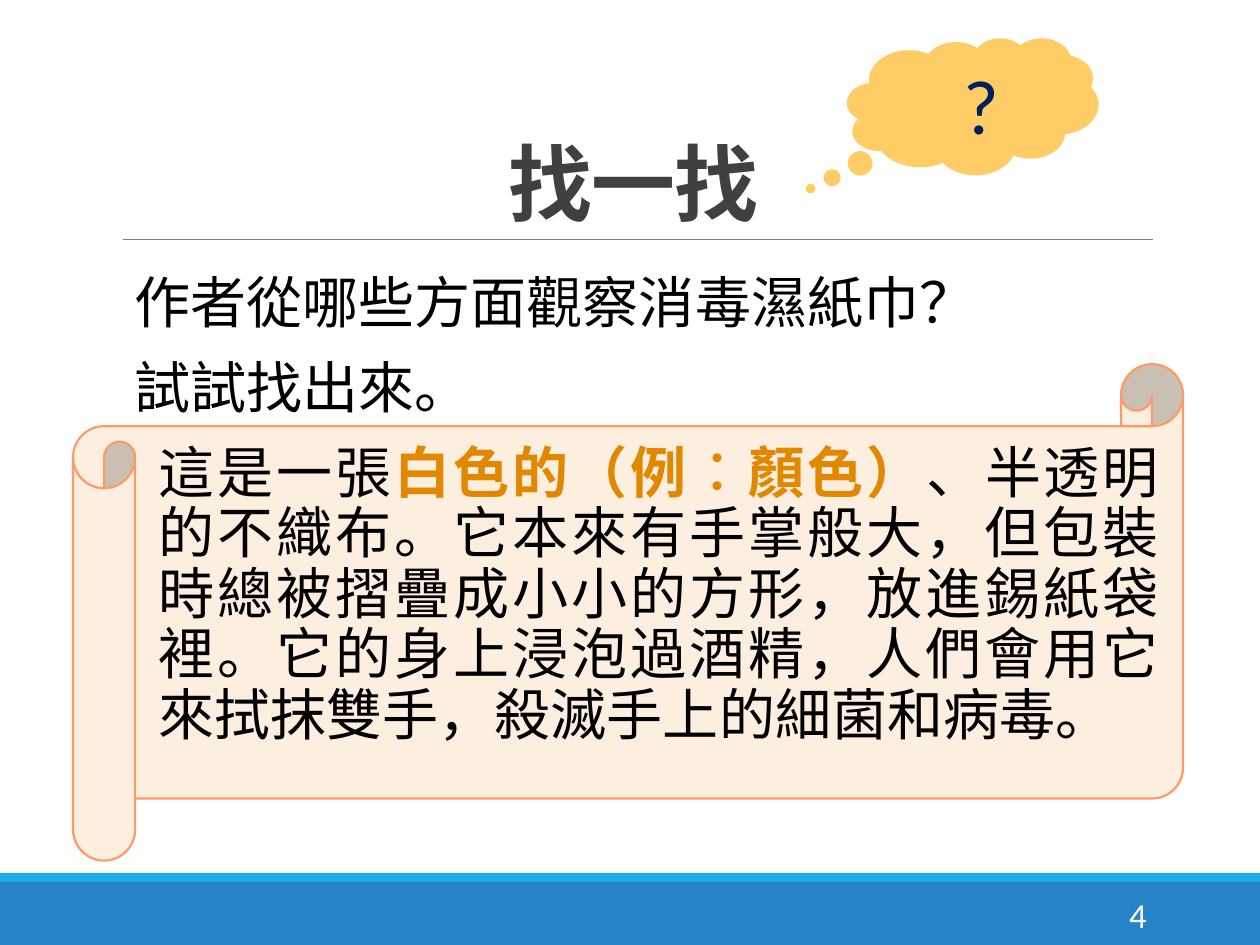
"""Build the slide that asks what the writer observed about a wet wipe."""
from lxml import etree
from pptx import Presentation
from pptx.dml.color import RGBColor
from pptx.enum.shapes import MSO_CONNECTOR, MSO_SHAPE
from pptx.enum.text import MSO_ANCHOR, MSO_AUTO_SIZE, PP_ALIGN
from pptx.oxml.ns import qn
from pptx.util import Inches, Pt

RECT, SCROLL, CLOUD = MSO_SHAPE.RECTANGLE, MSO_SHAPE.HORIZONTAL_SCROLL, MSO_SHAPE.CLOUD_CALLOUT
STRAIGHT = MSO_CONNECTOR.STRAIGHT
MIDDLE, BOTTOM = MSO_ANCHOR.MIDDLE, MSO_ANCHOR.BOTTOM
LEFT, CENTER, RIGHT, JUSTIFY = PP_ALIGN.LEFT, PP_ALIGN.CENTER, PP_ALIGN.RIGHT, PP_ALIGN.JUSTIFY
FIXED = MSO_AUTO_SIZE.NONE

BLUE = RGBColor(0x26, 0x83, 0xC6)
SKY = RGBColor(0x1C, 0xAD, 0xE4)
GRAY = RGBColor(0x80, 0x80, 0x80)
DARK = RGBColor(0x40, 0x40, 0x40)
CREAM = RGBColor(0xFC, 0xEF, 0xE0)
CORAL = RGBColor(0xFF, 0x99, 0x66)
GOLD = RGBColor(0xFF, 0xCC, 0x66)
AMBER = RGBColor(0xE2, 0x87, 0x00)
NAVY = RGBColor(0x00, 0x20, 0x60)
BLACK = RGBColor(0, 0, 0)
WHITE = RGBColor(0xFF, 0xFF, 0xFF)
HAN, LATIN = "Noto Sans CJK SC", "Calibri"


def write(para, text, size=32, font=HAN, color=BLACK, bold=False, align=LEFT):
    para.alignment = align
    run = para.add_run()
    run.text = text
    run.font.size, run.font.name, run.font.bold = Pt(size), font, bold
    run.font.color.rgb = color
    etree.SubElement(run.font._element, qn("a:ea"), typeface=font)
    return run


def draw(kind, box, fill, line=None):
    shape = slide.shapes.add_shape(kind, *map(Inches, box))
    shape.shadow.inherit = False
    shape.fill.solid()
    shape.fill.fore_color.rgb = fill
    if line is None:
        shape.line.fill.background()
    else:
        shape.line.color.rgb, shape.line.width = line, Pt(1.25)
    return shape


deck = Presentation()
deck.slide_width, deck.slide_height = Inches(10), Inches(7.5)
slide = deck.slides.add_slide(deck.slide_layouts[1])
title, body = slide.placeholders

draw(RECT, (0, 7, 10, 0.5), BLUE)
draw(RECT, (0, 6.93, 10, 0.07), SKY)
rule = slide.shapes.add_connector(STRAIGHT, *map(Inches, (0.98, 1.9, 9.15, 1.9)))
rule.line.color.rgb, rule.line.width = GRAY, Pt(0.5)
etree.SubElement(rule._element.spPr, qn("a:effectLst"))
draw(SCROLL, (0.58, 2.89, 8.81, 3.94), CREAM, CORAL)

for holder, box in ((title, (0.9, 0.31, 8.25, 1.59)), (body, (0.77, 2.13, 8.43, 4.11))):
    holder.left, holder.top, holder.width, holder.height = map(Inches, box)
    holder.text_frame.auto_size = FIXED
    holder.text_frame.word_wrap = True
    slide.shapes._spTree.append(holder._element)

title.text_frame.vertical_anchor = BOTTOM
head = title.text_frame.paragraphs[0]
head.line_spacing = 0.85
run = write(head, "找一找", size=48, color=DARK, bold=True, align=CENTER)
run.font._element.set("spc", "-50")

frame = body.text_frame
frame.margin_left = frame.margin_right = 0
story = (
    (0.3, LEFT, (("作者從哪些方面觀察消毒濕紙巾？", BLACK),)),
    (0.3, LEFT, (("試試找出來。", BLACK),)),
    (0.49, JUSTIFY, (
        ("這是一張", BLACK),
        ("白色的（例︰顏色）", AMBER),
        ("、半透明的不織布。它本來有手掌般大，但包裝時總被摺疊成小小的方形，"
         "放進錫紙袋裡。它的身上浸泡過酒精，人們會用它來拭抹雙手，"
         "殺滅手上的細菌和病毒。", BLACK))),
)
for row, (indent, align, parts) in enumerate(story):
    para = frame.add_paragraph() if row else frame.paragraphs[0]
    para.line_spacing, para.space_before, para.space_after = 0.9, Pt(12), Pt(2)
    props = para._p.get_or_add_pPr()
    props.set("marL", str(Inches(indent)))
    props.set("indent", "0")
    etree.SubElement(props, qn("a:buNone"))
    for text, color in parts:
        write(para, text, color=color, bold=color == AMBER, align=align)

page = slide.shapes.add_textbox(*map(Inches, (8.12, 7.06, 1.08, 0.4))).text_frame
page.word_wrap, page.vertical_anchor = True, MIDDLE
write(page.paragraphs[0], "4", size=20, font=LATIN, color=WHITE, align=RIGHT)

cloud = draw(CLOUD, (6.73, 0.31, 1.98, 1.07), GOLD, GOLD)
cloud.adjustments[0], cloud.adjustments[1] = -0.65, 0.61
thought = cloud.text_frame
thought.vertical_anchor, thought.margin_left = MIDDLE, Inches(0.38)
write(thought.paragraphs[0], "?", size=44, font=LATIN, color=NAVY, align=CENTER)

deck.save("out.pptx")
